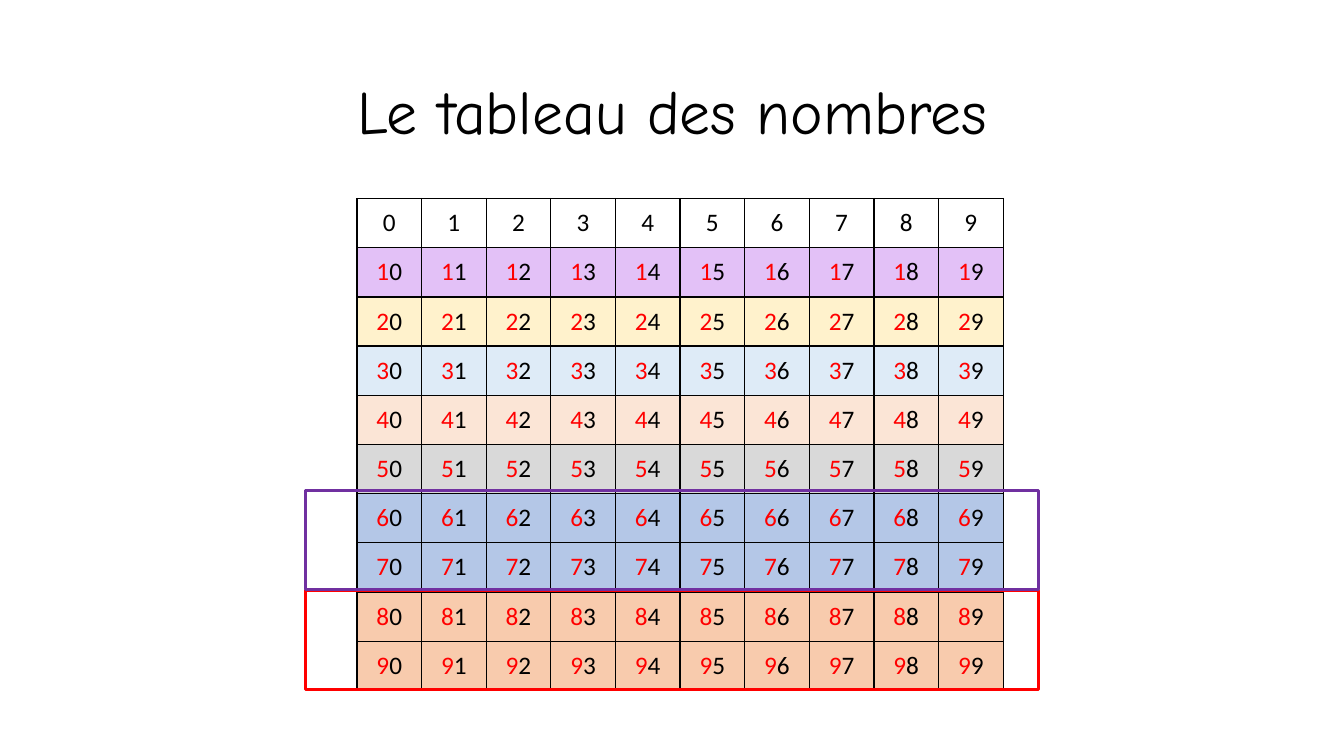
from dataclasses import dataclass

from lxml import etree
from pptx import Presentation
from pptx.dml.color import RGBColor
from pptx.enum.shapes import MSO_SHAPE
from pptx.enum.text import MSO_ANCHOR, PP_ALIGN
from pptx.oxml.ns import qn
from pptx.util import Inches, Pt

RECTANGLE = MSO_SHAPE.RECTANGLE
MIDDLE = MSO_ANCHOR.MIDDLE
CENTER = PP_ALIGN.CENTER

BLACK = "000000"
RED = "FF0000"
PURPLE = "7030A0"
TITLE_FONT = "Comic Neue"
NUMBER_FONT = "Calibri"
COLUMN_COUNT = 10
ROW_FILLS = [
    "FFFFFF", "E3C1F7", "FFF2CC", "DEEBF7", "FBE5D6",
    "D9D9D9", "B4C7E7", "B4C7E7", "F8CBAD", "F8CBAD",
]
BORDER_TAGS = ("a:lnL", "a:lnR", "a:lnT", "a:lnB")


@dataclass(frozen=True)
class DecadeFrame:
    top: float
    color: str


DECADE_FRAMES = [DecadeFrame(5.86, RED), DecadeFrame(4.87, PURPLE)]


def rgb(color: str) -> RGBColor:
    return RGBColor.from_string(color)


def format_run(run, font_name: str, size: float, color: str) -> None:
    run.font.name = font_name
    run.font.size = Pt(size)
    run.font.color.rgb = rgb(color)


def add_title(slide, text: str) -> None:
    title = slide.shapes.add_textbox(Inches(0.92), Inches(0.41), Inches(11.5), Inches(1.45))
    text_frame = title.text_frame
    text_frame.word_wrap = True
    text_frame.vertical_anchor = MIDDLE
    text_frame.text = text
    paragraph = text_frame.paragraphs[0]
    paragraph.alignment = CENTER
    paragraph.line_spacing = 0.9
    format_run(paragraph.runs[0], TITLE_FONT, 44, BLACK)


def set_borders(cell, color: str, width: float) -> None:
    properties = cell._tc.get_or_add_tcPr()
    for position, tag in enumerate(BORDER_TAGS):
        border = etree.Element(qn(tag), w=str(Pt(width)))
        fill = etree.SubElement(border, qn("a:solidFill"))
        etree.SubElement(fill, qn("a:srgbClr"), val=color)
        properties.insert(position, border)


def fill_number_cell(cell, number: int, fill_color: str) -> None:
    cell.fill.solid()
    cell.fill.fore_color.rgb = rgb(fill_color)
    cell.vertical_anchor = MIDDLE
    set_borders(cell, BLACK, 1)
    paragraph = cell.text_frame.paragraphs[0]
    paragraph.alignment = CENTER
    digits = str(number)
    for digit, color in zip(digits, (RED, BLACK)[-len(digits):]):
        run = paragraph.add_run()
        run.text = digit
        format_run(run, NUMBER_FONT, 18, color)


def add_number_table(slide) -> None:
    table = slide.shapes.add_table(
        len(ROW_FILLS), COLUMN_COUNT, Inches(3.54), Inches(1.97), Inches(6.41), Inches(4.88)
    ).table
    table.first_row = False
    table.horz_banding = False
    for row, fill_color in enumerate(ROW_FILLS):
        for column in range(COLUMN_COUNT):
            fill_number_cell(table.cell(row, column), row * COLUMN_COUNT + column, fill_color)


def add_decade_frame(slide, frame: DecadeFrame) -> None:
    shape = slide.shapes.add_shape(
        RECTANGLE, Inches(3.03), Inches(frame.top), Inches(7.27), Inches(0.98)
    )
    shape.shadow.inherit = False
    shape.fill.background()
    shape.line.color.rgb = rgb(frame.color)
    shape.line.width = Pt(2.25)


def main() -> None:
    presentation = Presentation()
    presentation.slide_width = Inches(13.33)
    presentation.slide_height = Inches(7.5)
    slide = presentation.slides.add_slide(presentation.slide_layouts[6])
    add_title(slide, "Le tableau des nombres")
    add_number_table(slide)
    for frame in DECADE_FRAMES:
        add_decade_frame(slide, frame)
    presentation.save("out.pptx")


if __name__ == "__main__":
    main()
